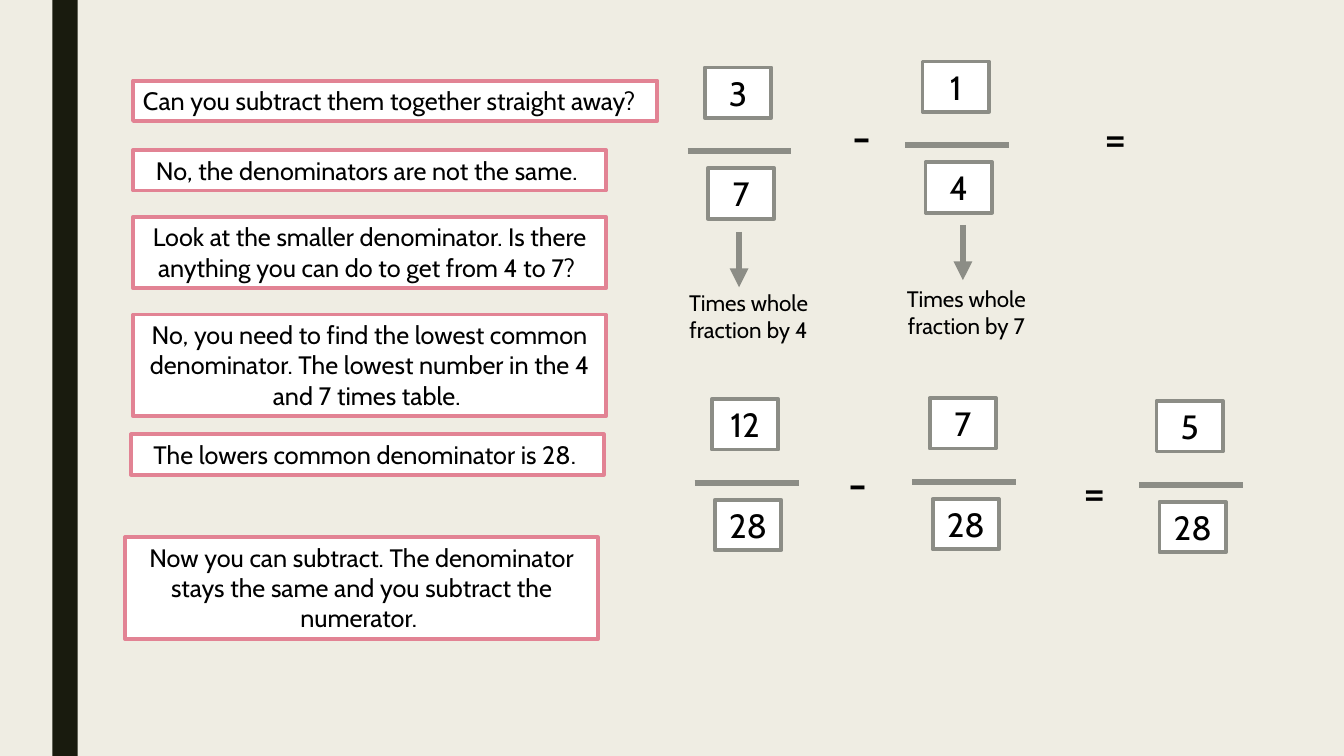
from lxml import etree
from pptx import Presentation
from pptx import util as u
from pptx.dml.color import RGBColor
from pptx.enum import shapes, text
from pptx.oxml.ns import qn

PX = 9144
COLOURS = {
    "page": "EFEDE3",
    "band": "191B0E",
    "ink": "000000",
    "paper": "FFFFFF",
    "grey": "8C8D86",
    "pink": "E28394",
}


def colour(name):
    """Return the named colour."""
    return RGBColor.from_string(COLOURS[name])


def write(box, words, size=18, align=text.PP_ALIGN.CENTER, wrap=True):
    """Put formatted words into a box that grows with its text."""
    frame = box.text_frame
    frame.word_wrap = wrap
    frame.auto_size = text.MSO_AUTO_SIZE.SHAPE_TO_FIT_TEXT
    para = frame.paragraphs[0]
    para.alignment = align
    span = para.add_run()
    span.text = words
    span.font.name = "Cabin"
    span.font.size = u.Pt(size)
    span.font.color.rgb = colour("ink")


class FractionSlide:
    """Hold the style and the current slide; lengths are in px."""

    def __init__(self, deck):
        """Add a blank page with its background."""
        self.page = deck.slides.add_slide(deck.slide_layouts[6])
        fill = self.page.background.fill
        fill.solid()
        fill.fore_color.rgb = colour("page")

    def band(self, x, y, width, height):
        """Draw the plain side band."""
        band = self.page.shapes.add_shape(
            shapes.MSO_SHAPE.RECTANGLE, x * PX, y * PX, width * PX, height * PX)
        band.shadow.inherit = False
        band.fill.solid()
        band.fill.fore_color.rgb = colour("band")
        band.line.fill.background()

    def label(self, words, x, y, width, height, parent=None, **style):
        """Add plain text."""
        box = (parent or self.page).shapes.add_textbox(
            x * PX, y * PX, width * PX, height * PX)
        write(box, words, **style)
        return box

    def framed(self, words, x, y, width, height, edge, **style):
        """Add text in a white box with a coloured edge."""
        box = self.label(words, x, y, width, height, **style)
        box.fill.solid()
        box.fill.fore_color.rgb = colour("paper")
        box.line.color.rgb = colour(edge)
        box.line.width = u.Pt(2.75)

    def line(self, x1, y1, x2, y2, parent=None, arrow=False):
        """Draw a thick grey line, with an arrowhead if asked."""
        line = (parent or self.page).shapes.add_connector(
            shapes.MSO_CONNECTOR.STRAIGHT, x1 * PX, y1 * PX, x2 * PX, y2 * PX)
        line.line.color.rgb = colour("grey")
        line.line.width = u.Pt(4.5)
        if arrow:
            etree.SubElement(line.line._get_or_add_ln(), qn("a:tailEnd"), type="triangle")
        etree.SubElement(line._element.spPr, qn("a:effectLst"))

    def fraction(self, top, bottom, x, y):
        """Group two number boxes around a bar that starts at x, y."""
        group = self.page.shapes.add_group_shape()
        for number, dx, dy in ((top, 17, -83), (bottom, 20, 17)):
            self.framed(number, x + dx, y + dy, 66, 50, "grey", parent=group, size=24)
        self.line(x, y, x + 103, y, parent=group)

    def sign(self, mark, x, y):
        """Add an arithmetic sign."""
        self.label(mark, x, y, 41, 64, size=32, align=text.PP_ALIGN.LEFT)

    def hint(self, words, x, y, arrow_x, arrow_y):
        """Add an arrow that leads down to a hint."""
        self.line(arrow_x, arrow_y, arrow_x, arrow_y + 55, arrow=True)
        self.label(words, x, y, 151, 64, size=16)


def main():
    """Build and save the deck."""
    deck = Presentation()
    deck.slide_width, deck.slide_height = 1333 * PX, 750 * PX
    slide = FractionSlide(deck)
    slide.band(52, 0, 25, 750)

    slide.framed("Can you subtract them together straight away?",
                 132, 80, 520, 40, "pink", align=text.PP_ALIGN.LEFT, wrap=False)
    steps = (
        ("No, the denominators are not the same. ", 132, 149, 40),
        ("Look at the smaller denominator. Is there anything you can do "
         "to get from 4 to 7? ", 132, 215, 71),
        ("No, you need to find the lowest common denominator. "
         "The lowest number in the 4 and 7 times table. ", 132, 312, 101),
        ("The lowers common denominator is 28. ", 130, 431, 40),
        ("Now you can subtract. The denominator stays the same "
         "and you subtract the numerator. ", 124, 533, 101),
    )
    for words, x, y, height in steps:
        slide.framed(words, x, y, 469, height, "pink")

    for fraction in (("3", "7", 682, 150), ("1", "4", 898, 144),
                     ("12", "28", 689, 479), ("7", "28", 905, 478),
                     ("5", "28", 1130, 481)):
        slide.fraction(*fraction)
    for sign in (("-", 836, 103), ("=", 1086, 104),
                 ("-", 832, 447), ("=", 1065, 455)):
        slide.sign(*sign)
    slide.hint("Times whole fraction by 4", 667, 282, 733, 230)
    slide.hint("Times whole fraction by 7", 883, 278, 955, 223)
    deck.save("out.pptx")


if __name__ == "__main__":
    main()
